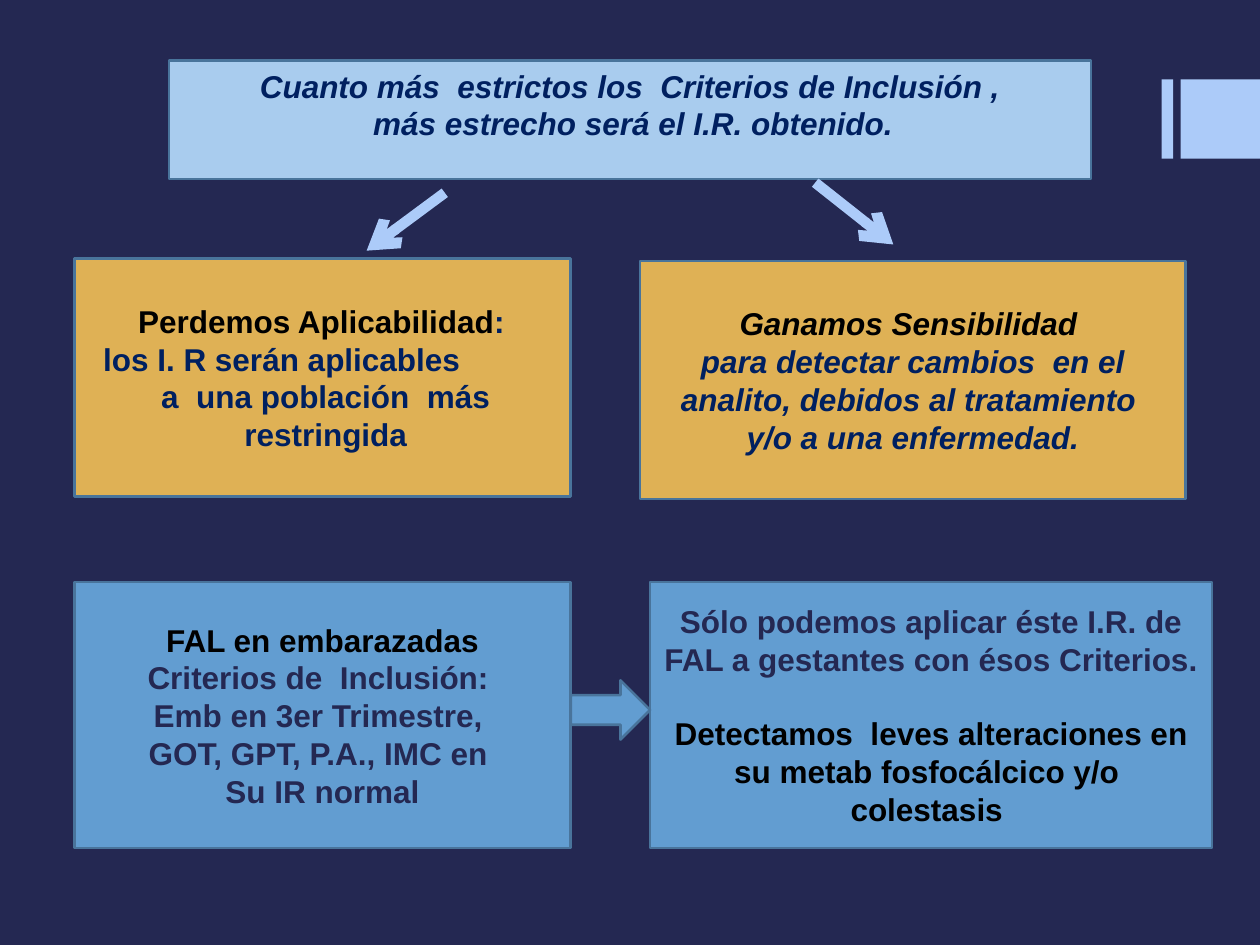
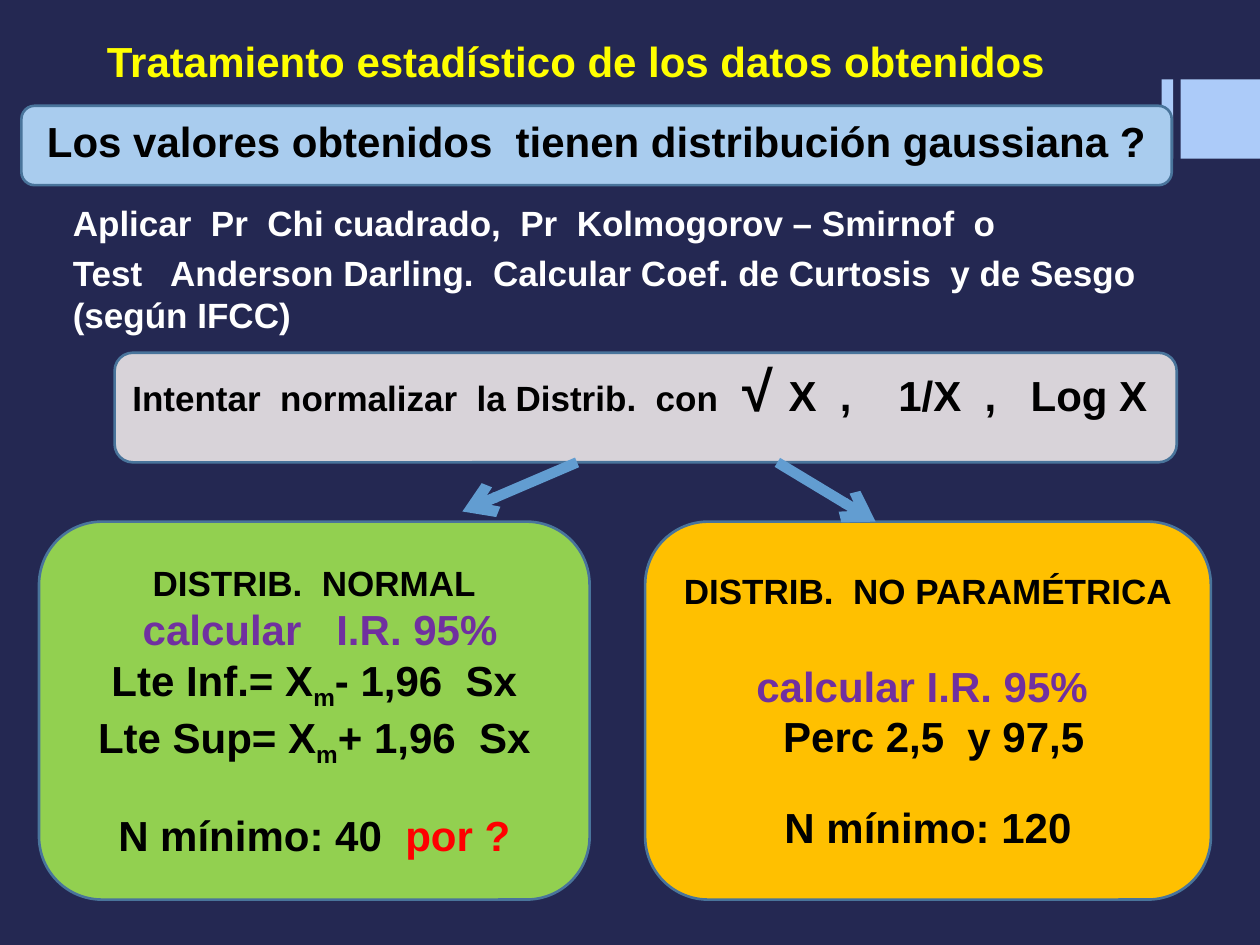
import pptx
import pptx.util
import pptx.dml.color
import pptx.enum.shapes
import pptx.enum.text
from lxml import etree
from pptx.oxml.ns import qn

SHAPES = pptx.enum.shapes.MSO_SHAPE
ALIGN = pptx.enum.text.PP_ALIGN
ANCHOR = pptx.enum.text.MSO_ANCHOR

WIDTH, HEIGHT = 10, 7.5
FONT = "Arial"
COLORS = {
    "night": "242852", "accent": "ACCBF9", "outline": "49749B",
    "pale": "A9CCEE", "sand": "DFB155", "blue": "629DD1", "grey": "D8D3D9",
    "green": "92D050", "amber": "FFC000", "navy": "002060", "black": "000000",
    "white": "FFFFFF", "yellow": "FFFF00", "purple": "7030A0", "red": "FF0000",
}

# All places are percentages of the slide: left, top, width, height
BARS = [(92.2, 8.4, 0.9, 8.4), (93.7, 8.4, 6.3, 8.4)]
LEFT_COLUMN = (5.9, 39.4)
EXAMPLE_ROW = (61.6, 28.13)
METHOD_ROW = (55.2, 40)


def line(*runs, **layout):
    """A paragraph: runs are (text, colour, changes); layout holds paragraph options."""
    return runs, layout


# Content of slide 1: strict criteria and their consequences
CRITERIA = {
    "size": 18,
    "boxes": [
        dict(place=(13.4, 6.4, 73.2, 12.53), fill="pale", anchor="top", italic=True, lines=[
            line(("Cuanto más  estrictos los  Criterios de Inclusión ,", "navy")),
            line((" más estrecho será el I.R. obtenido. ", "navy"), indent=0.05)]),
        dict(place=(50.8, 27.6, 43.3, 25.2), fill="sand", italic=True, lines=[
            line(("Ganamos Sensibilidad ", "black")),
            line(("para detectar cambios  en el analito, debidos al tratamiento ", "navy")),
            line(("y/o a una enfermedad.", "navy"))]),
        dict(place=(LEFT_COLUMN[0], 27.33, LEFT_COLUMN[1], 25.2), fill="sand", lines=[
            line(("Perdemos Aplicabilidad", "black"), (": ", "navy"), indent=0.05),
            line(("los I. R serán aplicables", "navy"), indent=0.13, align="left"),
            line(("a  una población  más restringida", "navy"), indent=0.05)]),
        dict(place=(LEFT_COLUMN[0], EXAMPLE_ROW[0], LEFT_COLUMN[1], EXAMPLE_ROW[1]),
             fill="blue", lines=[
            line(("FAL en embarazadas", "black")),
            line(("Criterios de  Inclusión: ", "night")),
            line(("Emb en 3er Trimestre, ", "night")),
            line(("GOT, GPT, P.A., IMC en ", "night")),
            line(("Su IR normal", "night"))]),
        dict(place=(51.6, EXAMPLE_ROW[0], 44.6, EXAMPLE_ROW[1]), fill="blue", lines=[
            line(("Sólo podemos aplicar éste I.R. de FAL a gestantes con ésos Criterios.",
                  "night")),
            line(("Detectamos  leves alteraciones en su metab fosfocálcico y/o  colestasis ",
                  "black"), before=20.7)]),
        dict(place=(45.3, 72, 6.3, 6.27), fill="blue", shape=SHAPES.RIGHT_ARROW, lines=[]),
    ],
    "arrow_color": "accent",
    "arrows": [(64.7, 19.33, 70.9, 25.87), (35.3, 20.4, 29.1, 26.53)],
}

# Content of slide 2: statistical treatment
BIG = {"size": 24}
SUBSCRIPT = {"size": 24, "baseline": -25000}
ROUNDED = SHAPES.ROUNDED_RECTANGLE


def limit(label, sign):
    return line((label + "= X", "black", BIG), ("m", "black", SUBSCRIPT),
                (sign + " 1,96  Sx", "black", BIG))


STATISTICS = {
    "size": 20,
    "boxes": [
        dict(place=(7.5, 1.73, 82.5, 9.47), lines=[
            line(("Tratamiento estadístico de los datos obtenidos", "yellow", BIG),
                 align="left")]),
        dict(place=(4.3, 20.67, 91.3, 15.33), anchor="top", lines=[
            line(("Aplicar  Pr  Chi cuadrado,  Pr  Kolmogorov – Smirnof  o", "white"),
                 indent=0.05, align="left"),
            line(("Test   Anderson Darling.  Calcular Coef. de Curtosis  y de Sesgo "
                  "(según IFCC)", "white"), indent=0.05, align="left", before=4.6)]),
        dict(place=(3.1, METHOD_ROW[0], 43.7, METHOD_ROW[1]), fill="green", shape=ROUNDED, lines=[
            line(("DISTRIB.  NORMAL", "black")),
            line((" calcular   I.R. 95%", "purple", BIG)),
            limit("Lte Inf.", "-"),
            limit("Lte Sup", "+"),
            line(("N mínimo: 40  ", "black", BIG), ("por ?", "red", BIG), before=23)]),
        dict(place=(51.2, METHOD_ROW[0], 44.9, METHOD_ROW[1]), fill="amber", shape=ROUNDED, lines=[
            line(("DISTRIB.  NO PARAMÉTRICA", "black")),
            line(("calcular I.R. 95% ", "purple", BIG), before=27.6),
            line((" Perc 2,5  y 97,5", "black", BIG)),
            line(("N mínimo: 120", "black", BIG), before=23)]),
        dict(place=(1.7, 11.2, 91.3, 8.4), fill="pale", shape=ROUNDED, anchor="top", lines=[
            line(("Los valores obtenidos  tienen distribución gaussiana ?", "black", BIG))]),
        dict(place=(9.1, 37.33, 84.3, 11.6), fill="grey", shape=ROUNDED, bottom=0.34, lines=[
            line(("Intentar  normalizar  la Distrib.  con ", "black"),
                 (" ", "black", {"size": 28}), ("√ ", "black", {"size": 32}),
                 ("X  ,\t1/X  ,\tLog X", "black", BIG),
                 align="left", tabs=(6.08, 7.13))]),
    ],
    "arrow_color": "blue",
    "arrows": [(45.8, 48.93, 36.7, 54.13), (61.7, 48.93, 69.5, 55.2)],
}


def rgb(name):
    return pptx.dml.color.RGBColor.from_string(COLORS[name])


def lengths(percentages):
    """Turn alternating horizontal and vertical percentages into slide lengths."""
    return [pptx.util.Inches(share / 100 * (HEIGHT if index % 2 else WIDTH))
            for index, share in enumerate(percentages)]


def add_bars(slide):
    for place in BARS:
        bar = slide.shapes.add_shape(SHAPES.RECTANGLE, *lengths(place))
        bar.shadow.inherit = False
        bar.fill.solid()
        bar.fill.fore_color.rgb = rgb("accent")
        bar.line.fill.background()


def write_line(paragraph, runs, layout, size, italic):
    paragraph.alignment = ALIGN.LEFT if layout.get("align") == "left" else ALIGN.CENTER
    paragraph.space_before = pptx.util.Pt(layout.get("before", 0))
    properties = paragraph._p.get_or_add_pPr()
    properties.set("marL", str(pptx.util.Inches(layout.get("indent", 0))))
    if "tabs" in layout:
        stops = etree.SubElement(properties, qn("a:tabLst"))
        for position in layout["tabs"]:
            etree.SubElement(stops, qn("a:tab"), pos=str(pptx.util.Inches(position)), algn="l")
    for text, color, *changes in runs:
        style = changes[0] if changes else {}
        run = paragraph.add_run()
        run.text = text
        run.font.name = FONT
        run.font.size = pptx.util.Pt(style.get("size", size))
        run.font.bold = True
        run.font.italic = italic
        run.font.color.rgb = rgb(color)
        if "baseline" in style:
            run._r.get_or_add_rPr().set("baseline", str(style["baseline"]))


def add_box(slide, box, size):
    place = lengths(box["place"])
    if "fill" in box:
        shape = slide.shapes.add_shape(box.get("shape", SHAPES.RECTANGLE), *place)
        shape.shadow.inherit = False
        shape.fill.solid()
        shape.fill.fore_color.rgb = rgb(box["fill"])
        shape.line.color.rgb = rgb("outline")
        shape.line.width = pptx.util.Pt(1.5)
    else:
        shape = slide.shapes.add_textbox(*place)
    frame = shape.text_frame
    frame.word_wrap = True
    frame.vertical_anchor = ANCHOR.TOP if box.get("anchor") == "top" else ANCHOR.MIDDLE
    frame.margin_bottom = pptx.util.Inches(box.get("bottom", 0.05))
    for index, (runs, layout) in enumerate(box["lines"]):
        paragraph = frame.add_paragraph() if index else frame.paragraphs[0]
        write_line(paragraph, runs, layout, size, box.get("italic", False))


def add_arrow(slide, ends, color):
    arrow = slide.shapes.add_connector(
        pptx.enum.shapes.MSO_CONNECTOR.STRAIGHT, *lengths(ends))
    arrow.line.color.rgb = rgb(color)
    arrow.line.width = pptx.util.Pt(6)
    etree.SubElement(arrow.line._get_or_add_ln(), qn("a:tailEnd"), type="arrow")
    etree.SubElement(arrow._element.spPr, qn("a:effectLst"))


def main():
    presentation = pptx.Presentation()
    presentation.slide_width = pptx.util.Inches(WIDTH)
    presentation.slide_height = pptx.util.Inches(HEIGHT)
    background = presentation.slide_master.background.fill
    background.solid()
    background.fore_color.rgb = rgb("night")
    for content in (CRITERIA, STATISTICS):
        slide = presentation.slides.add_slide(presentation.slide_layouts[6])
        add_bars(slide)
        for box in content["boxes"]:
            add_box(slide, box, content["size"])
        for ends in content["arrows"]:
            add_arrow(slide, ends, content["arrow_color"])
    presentation.save("out.pptx")


if __name__ == "__main__":
    main()
